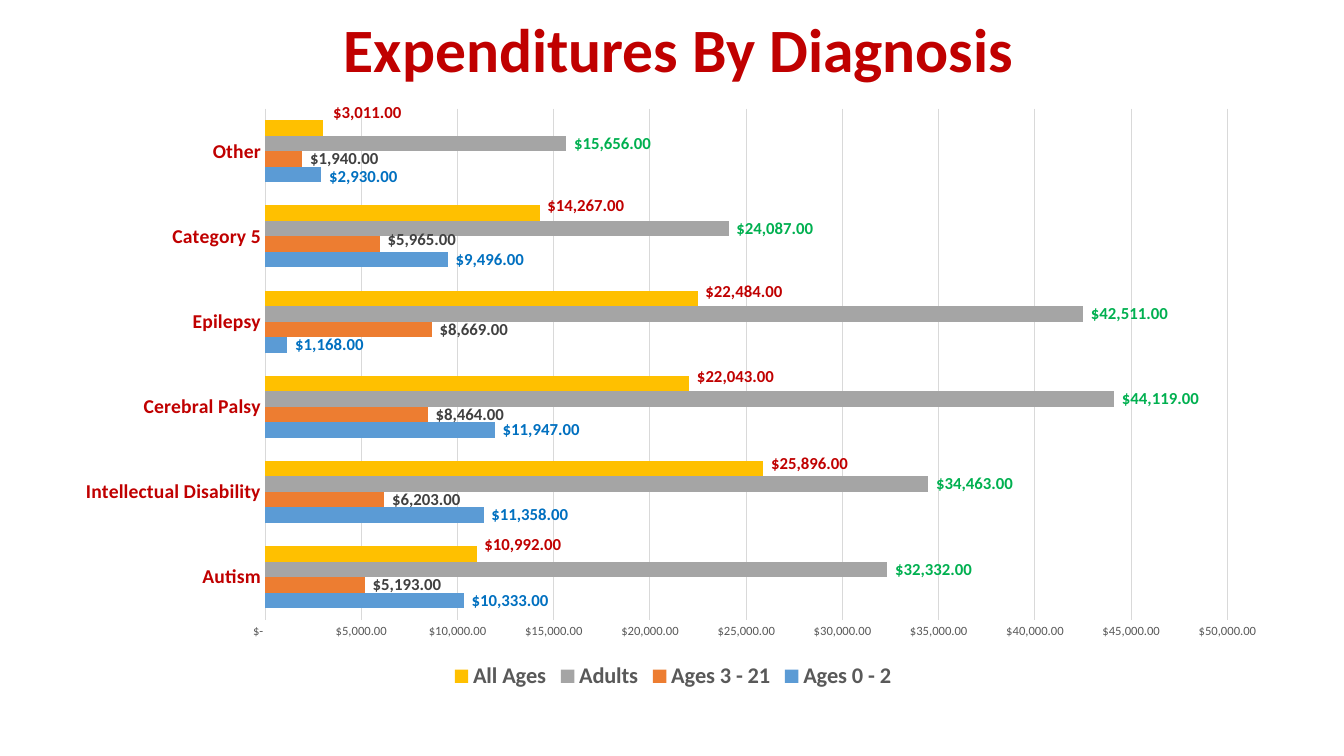
from copy import deepcopy

from lxml import etree
from pptx import Presentation
from pptx.chart.data import CategoryChartData
from pptx.dml.color import RGBColor
from pptx.enum import chart as ch, text
from pptx.oxml.ns import qn
from pptx.util import Cm, Pt

TITLE = "Expenditures By Diagnosis"
DIAGNOSES = ["Autism", "Intellectual Disability", "Cerebral Palsy",
             "Epilepsy", "Category 5", "Other"]
# name, amounts, bar colour, label colour
AGE_GROUPS = [
    ("Ages 0 - 2", (10333, 11358, 11947, 1168, 9496, 2930), "5B9BD5", "0070C0"),
    ("Ages 3 - 21", (5193, 6203, 8464, 8669, 5965, 1940), "ED7D31", "404040"),
    ("Adults", (32332, 34463, 44119, 42511, 24087, 15656), "A5A5A5", "00B050"),
    ("All Ages", (10992, 25896, 22043, 22484, 14267, 3011), "FFC000", "C00000"),
]
# label shifts as shares of the chart: group -> {diagnosis: (x, y)}
LABEL_SHIFTS = {
    "Ages 0 - 2": {"Other": (0, 0.003)},
    "Ages 3 - 21": {"Category 5": (0, -0.007)},
    "All Ages": {
        "Autism": (0, -0.015), "Intellectual Disability": (0, -0.008),
        "Cerebral Palsy": (0, -0.012), "Epilepsy": (0, -0.012),
        "Category 5": (0, -0.013), "Other": (0.002, -0.025),
    },
}
DOLLARS = '_("$"* #,##0.00_);_("$"* \\(#,##0.00\\);_("$"* "-"??_);_(@_)'
PLOT_AREA = {"x": 0.166, "y": 0.02, "w": 0.788, "h": 0.855}
THEME = {
    "font": "Calibri", "accent": "C00000", "muted": "595959", "grid": "D9D9D9",
    "title": 44, "legend": 16, "category": 14, "label": 12, "axis": 9,
}


def style(font, size, color, bold=True):
    font.name, font.size, font.bold = THEME["font"], Pt(THEME[size]), bold
    font.color.rgb = RGBColor.from_string(color)


def manual_layout(**parts):
    layout = etree.Element(qn("c:layout"))
    manual = etree.SubElement(layout, qn("c:manualLayout"))
    for tag, value in parts.items():
        etree.SubElement(manual, qn(f"c:{tag}"), val=str(value))
    return layout


def shift_label(labels, index, x, y):
    """Give one point its own label, styled as its series and moved by x, y."""
    label = etree.Element(qn("c:dLbl"))
    etree.SubElement(label, qn("c:idx"), val=str(index))
    label.append(manual_layout(x=x, y=y))
    skipped = (qn("c:dLbl"), qn("c:showLeaderLines"))
    label.extend(deepcopy(part) for part in labels if part.tag not in skipped)
    labels.insert(len(labels.findall(qn("c:dLbl"))), label)


def add_title(slide):
    box = slide.shapes.add_textbox(Cm(2.51), Cm(0.2), Cm(29.21), Cm(2.24))
    frame = box.text_frame
    frame.word_wrap = True
    frame.vertical_anchor = text.MSO_ANCHOR.MIDDLE
    heading = frame.paragraphs[0]
    heading.text = TITLE
    heading.alignment = text.PP_ALIGN.CENTER
    heading.line_spacing = 0.9
    style(heading.font, "title", THEME["accent"])


def style_axes(chart):
    diagnoses, amounts = chart.category_axis, chart.value_axis
    for axis in (diagnoses, amounts):
        axis.major_tick_mark = axis.minor_tick_mark = ch.XL_TICK_MARK.NONE
        axis.format.line.fill.background()
    style(diagnoses.tick_labels.font, "category", THEME["accent"])
    style(amounts.tick_labels.font, "axis", THEME["muted"], bold=False)
    amounts.tick_labels.number_format = DOLLARS
    amounts.tick_labels.number_format_is_linked = False
    amounts.minimum_scale, amounts.maximum_scale = 0, 50000
    amounts.major_unit = 5000
    grid = amounts.major_gridlines.format.line
    grid.width = Pt(0.75)
    grid.color.rgb = RGBColor.from_string(THEME["grid"])


def style_group(series, name, bar_color, label_color):
    series.format.fill.solid()
    series.format.fill.fore_color.rgb = RGBColor.from_string(bar_color)
    labels = series.data_labels
    labels.show_value = True
    labels.number_format = DOLLARS
    labels.number_format_is_linked = False
    labels.position = ch.XL_LABEL_POSITION.OUTSIDE_END
    style(labels.font, "label", label_color)
    label_xml = series.data_labels.font and series._element.find(qn("c:dLbls"))
    for diagnosis, shift in LABEL_SHIFTS.get(name, {}).items():
        shift_label(label_xml, DIAGNOSES.index(diagnosis), *shift)


def add_expenditure_chart(slide):
    data = CategoryChartData(number_format=DOLLARS)
    data.categories = DIAGNOSES
    for name, amounts, *_ in AGE_GROUPS:
        data.add_series(name, amounts)
    chart = slide.shapes.add_chart(
        ch.XL_CHART_TYPE.BAR_CLUSTERED,
        Cm(1.57), Cm(2.44), Cm(30.78), Cm(15.06), data).chart
    chart.has_title = False
    chart.font.name, chart.font.size = THEME["font"], Pt(10)
    chart.has_legend = True
    chart.legend.position = ch.XL_LEGEND_POSITION.BOTTOM
    chart.legend.include_in_layout = False
    style(chart.legend.font, "legend", THEME["muted"])
    style_axes(chart)

    bars = chart.plots[0]
    bars.gap_width, bars.overlap, bars.vary_by_categories = 150, 0, False
    for series, (name, _, bar_color, label_color) in zip(bars.series, AGE_GROUPS):
        style_group(series, name, bar_color, label_color)

    plot_area = chart._chartSpace.find(".//" + qn("c:plotArea"))
    for old in plot_area.findall(qn("c:layout")):
        plot_area.remove(old)
    plot_area.insert(0, manual_layout(
        layoutTarget="inner", xMode="edge", yMode="edge", **PLOT_AREA))


def main():
    deck = Presentation()
    deck.slide_width, deck.slide_height = Cm(33.87), Cm(19.05)
    slide = deck.slides.add_slide(deck.slide_layouts[6])
    add_title(slide)
    add_expenditure_chart(slide)
    deck.save("out.pptx")


if __name__ == "__main__":
    main()
